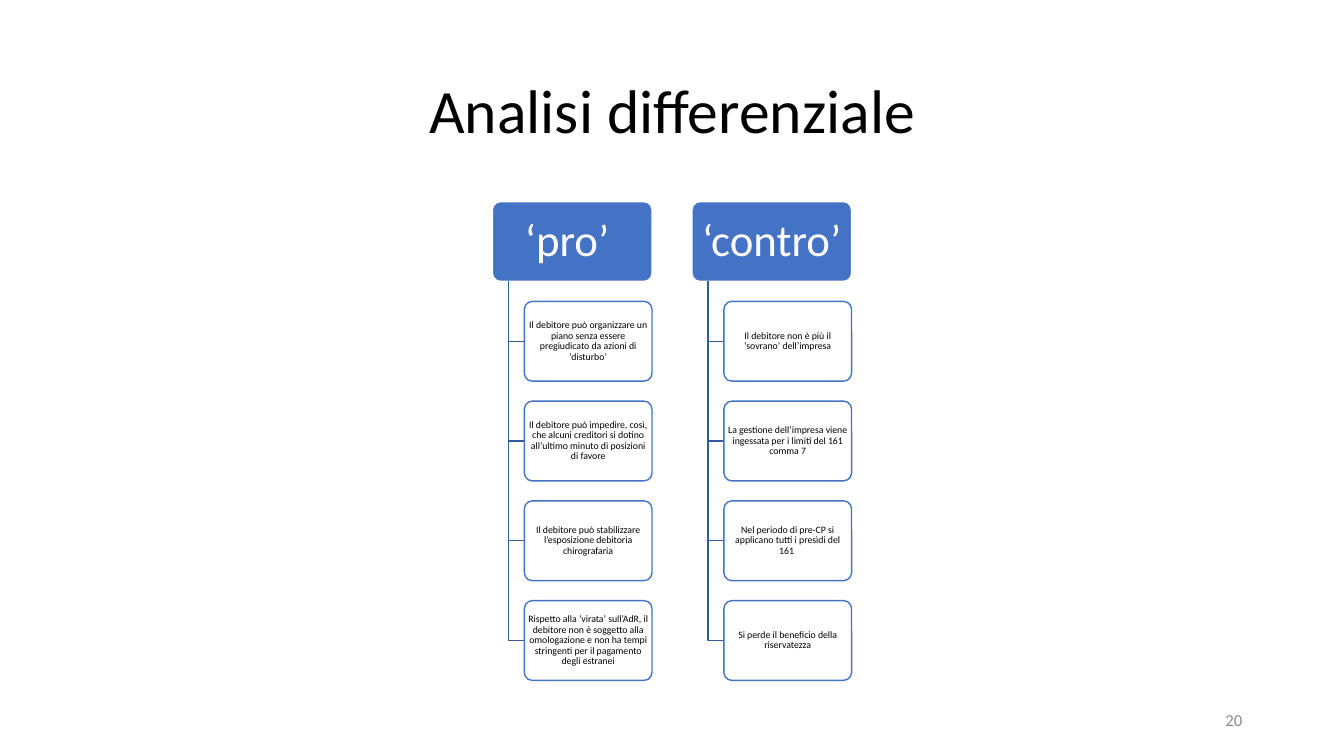
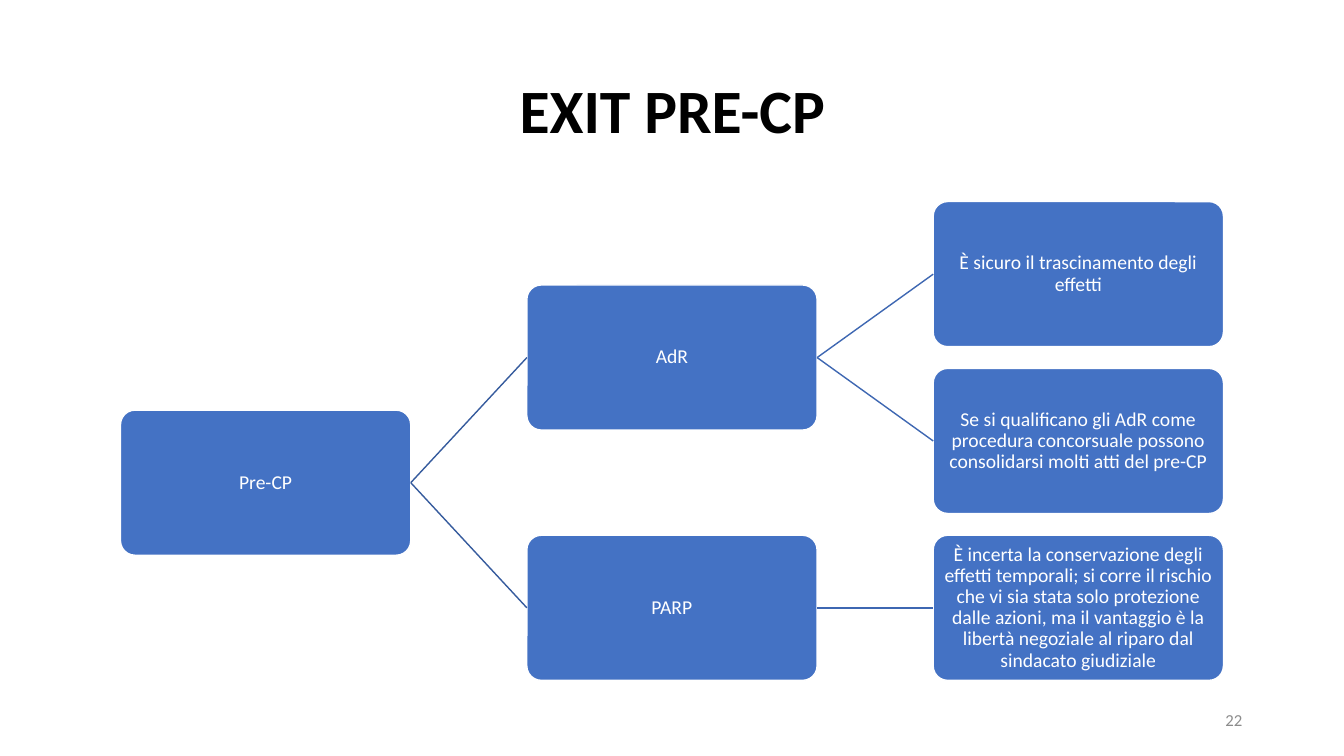
from dataclasses import dataclass

from lxml.etree import SubElement
from pptx import Presentation
from pptx.dml.color import RGBColor
from pptx.enum.shapes import MSO_CONNECTOR, MSO_SHAPE
from pptx.enum.text import MSO_ANCHOR, PP_ALIGN
from pptx.oxml.ns import qn
from pptx.util import Inches, Pt


# Colours and type sizes
@dataclass(frozen=True)
class Theme:
    font: str = "Calibri"
    blue: str = "4472C4"
    dark: str = "365B9D"
    mid: str = "3E67B2"
    white: str = "FFFFFF"
    black: str = "000000"
    grey: str = "8C8C8C"
    title: int = 44
    head: int = 32
    node: int = 14
    foot: int = 12
    item: int = 7


WIDE, HIGH = 13.33, 7.5
TOP, DEPTH = 2, 4.75  # diagram band, in inches


# Cells twice as wide as high, centred across the slide; gaps are shares of a cell
class Grid:
    def __init__(self, cols, rows, col_gap, row_gap):
        self.high = DEPTH / (rows + (rows - 1) * row_gap)
        self.wide = 2 * self.high
        self.step = self.wide * (1 + col_gap)
        self.drop = self.high * (1 + row_gap)
        self.left = (WIDE - self.wide - (cols - 1) * self.step) / 2

    def cell(self, col, row, indent=0):
        """Box of a cell; indent is a share of its width."""
        return (self.left + col * self.step + indent * self.wide,
                TOP + row * self.drop,
                self.wide * (1 - indent), self.high)


class Deck:
    def __init__(self, theme):
        self.theme = theme
        self.show = Presentation()
        self.show.slide_width = Inches(WIDE)
        self.show.slide_height = Inches(HIGH)
        self.slide = None

    def label(self, frame, text, size, color, align=PP_ALIGN.CENTER, bold=False):
        frame.word_wrap = True
        frame.vertical_anchor = MSO_ANCHOR.MIDDLE
        para = frame.paragraphs[0]
        para.text = text
        para.alignment = align
        para.line_spacing = 0.9
        font = para.font
        font.name, font.size, font.bold = self.theme.font, Pt(size), bold
        font.color.rgb = RGBColor.from_string(color)

    def stroke(self, line, color):
        line.color.rgb = RGBColor.from_string(color)
        line.width = Pt(1)

    def page(self, title, number, bold=False):
        """New slide with its title and number."""
        look = self.theme
        self.slide = self.show.slides.add_slide(self.show.slide_layouts[5])
        head = self.slide.shapes.title
        head.left, head.top = Inches(0.92), Inches(0.4)
        head.width, head.height = Inches(11.5), Inches(1.45)
        self.label(head.text_frame, title, look.title, look.black, bold=bold)
        foot = self.slide.shapes.add_textbox(
            Inches(9.42), Inches(6.95), Inches(3), Inches(0.4))
        self.label(foot.text_frame, number, look.foot, look.grey, PP_ALIGN.RIGHT)

    def card(self, box, text, size, fill, edge, ink, pad=(0.01, 0.01)):
        """Rounded box with centred text."""
        card = self.slide.shapes.add_shape(
            MSO_SHAPE.ROUNDED_RECTANGLE, *map(Inches, box))
        card.adjustments[0] = 0.1
        card.shadow.inherit = False
        card.fill.solid()
        card.fill.fore_color.rgb = RGBColor.from_string(fill)
        self.stroke(card.line, edge)
        frame = card.text_frame
        frame.margin_left = frame.margin_right = Inches(pad[0])
        frame.margin_top = frame.margin_bottom = Inches(pad[1])
        self.label(frame, text, size, ink)
        return card

    def elbow(self, x, y, right, low):
        """Line that goes down, then right."""
        pen = self.slide.shapes.build_freeform(Inches(x), Inches(y))
        pen.add_line_segments(
            [(Inches(x), Inches(low)), (Inches(right), Inches(low))], close=False)
        bend = pen.convert_to_shape()
        bend.fill.background()
        bend.shadow.inherit = False
        self.stroke(bend.line, self.theme.dark)

    def link(self, start, end, color):
        """Straight line from right side to left side."""
        link = self.slide.shapes.add_connector(MSO_CONNECTOR.STRAIGHT, 0, 0, 0, 0)
        link.begin_connect(start, 3)
        link.end_connect(end, 1)
        self.stroke(link.line, color)
        SubElement(link._element.spPr, qn("a:effectLst"))

    def lists(self, groups):
        """One column per group: a head with items hung below it."""
        look = self.theme
        rows = 1 + max(len(items) for _, items in groups)
        grid = Grid(len(groups), rows, 0.25, 0.25)
        for col, (head, items) in enumerate(groups):
            x, y, wide, high = box = grid.cell(col, 0)
            self.card(box, head, look.head, look.blue, look.white, look.white,
                      (0.07, 0.04))
            for row, text in enumerate(items, 1):
                spot = grid.cell(col, row, 0.2)
                self.elbow(x + wide / 10, y + high, spot[0], spot[1] + high / 2)
                self.card(spot, text, look.item, look.white, look.blue, look.black)

    def tree(self, nodes):
        """Nodes as name: (column, row, parent, text)."""
        look = self.theme
        grid = Grid(3, 3, 0.4, 0.15)
        cards = {}
        for name, (col, row, parent, text) in nodes.items():
            cards[name] = self.card(grid.cell(col, row), text, look.node,
                                    look.blue, look.white, look.white)
            if parent:
                self.link(cards[parent], cards[name],
                          look.dark if col == 1 else look.mid)


def main():
    deck = Deck(Theme())

    # Pros and cons
    deck.page("Analisi differenziale", "20")
    deck.lists([
        ("‘pro’ ", [
            "Il debitore può organizzare un piano senza essere pregiudicato "
            "da azioni di ‘disturbo’",
            "Il debitore può impedire, così, che alcuni creditori si dotino "
            "all’ultimo minuto di posizioni di favore",
            "Il debitore può stabilizzare l’esposizione debitoria chirografaria",
            "Rispetto alla ‘virata’ sull’AdR, il debitore non è soggetto alla "
            "omologazione e non ha tempi stringenti per il pagamento degli estranei",
        ]),
        ("‘contro’", [
            "Il debitore non è più il ‘sovrano’ dell’impresa",
            "La gestione dell’impresa viene ingessata per i limiti del 161 comma 7",
            "Nel periodo di pre-CP si applicano tutti i presìdi del 161 ",
            "Si perde il beneficio della riservatezza",
        ]),
    ])

    # Ways out; each parent sits midway between its children
    deck.page("EXIT PRE-CP", "22", bold=True)
    deck.tree({
        "root": (0, 1.25, None, "Pre-CP"),
        "deal": (1, 0.5, "root", "AdR"),
        "sure": (2, 0, "deal", "È sicuro il trascinamento degli effetti"),
        "acts": (2, 1, "deal",
                 "Se si qualificano gli AdR come procedura concorsuale possono "
                 "consolidarsi molti atti del pre-CP"),
        "plan": (1, 2, "root", "PARP"),
        "risk": (2, 2, "plan",
                 "È incerta la conservazione degli effetti temporali; si corre il "
                 "rischio che vi sia stata solo protezione dalle azioni, ma il "
                 "vantaggio è la libertà negoziale al riparo dal sindacato "
                 "giudiziale"),
    })

    deck.show.save("out.pptx")


if __name__ == "__main__":
    main()
